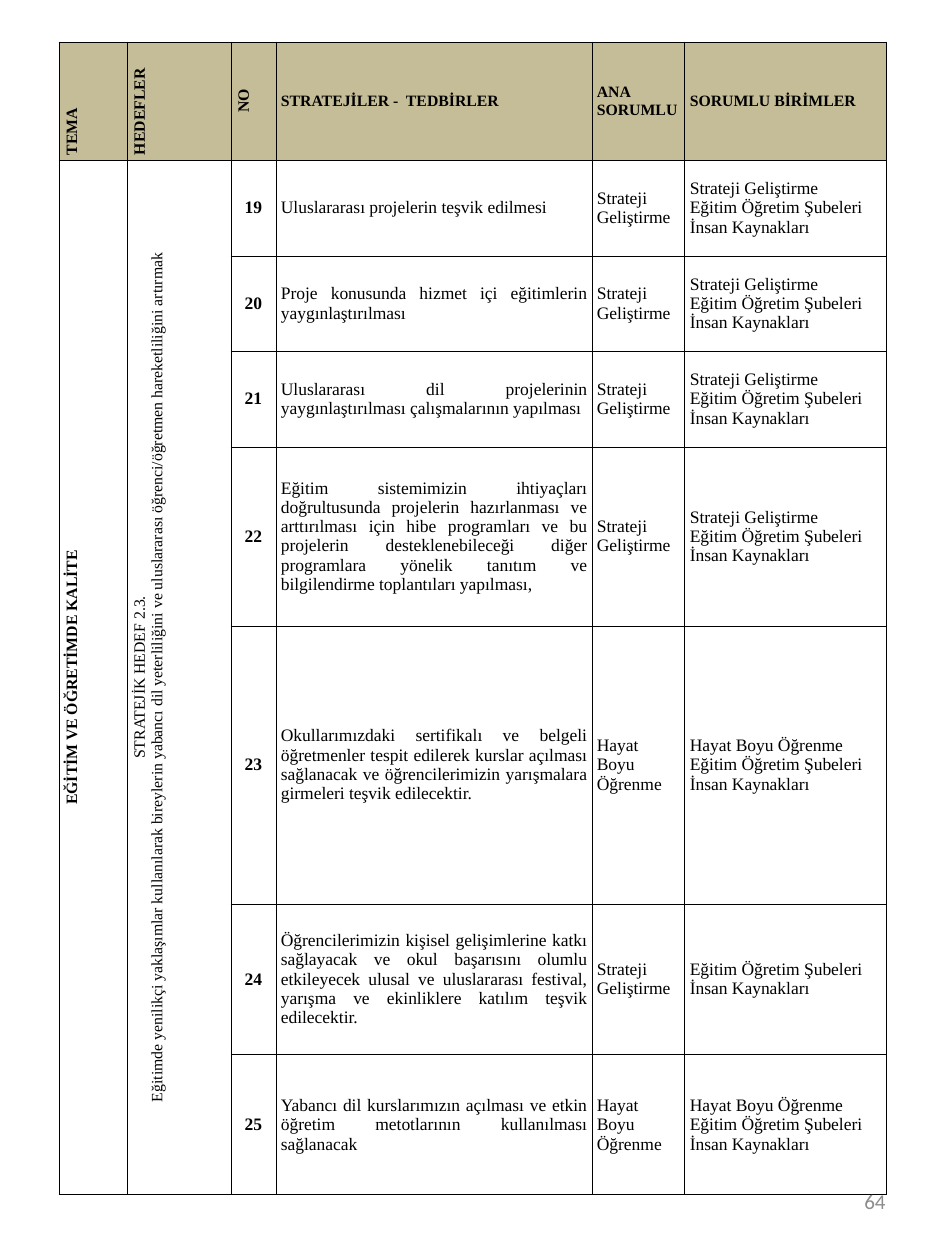
from lxml.etree import SubElement
from pptx import Presentation
from pptx.dml.color import RGBColor
from pptx.enum.text import MSO_ANCHOR, PP_ALIGN
from pptx.oxml.ns import qn
from pptx.util import Pt

PX = 914400 // 126
COLORS = {"text": "000000", "border": "000000", "header": "C4BD97", "number": "8C8C8C"}
SERIF = "Times New Roman"
LEFT, CENTER, JUSTIFY = PP_ALIGN.LEFT, PP_ALIGN.CENTER, PP_ALIGN.JUSTIFY

COLUMNS = [68, 104, 45, 316, 93, 202]
ROWS = [118, 96, 95, 96, 179, 278, 151, 140]

# Header: text, alignment, upright
HEADER = [
    ("TEMA", LEFT, True),
    ("HEDEFLER", LEFT, True),
    ("NO", CENTER, True),
    ("STRATEJİLER -  TEDBİRLER", JUSTIFY, False),
    ("ANA SORUMLU", LEFT, False),
    ("SORUMLU BİRİMLER", LEFT, False),
]
THEME = "EĞİTİM VE ÖĞRETİMDE KALİTE"
GOAL = ("STRATEJİK HEDEF 2.3.\nEğitimde yenilikçi yaklaşımlar kullanılarak bireylerin "
        "yabancı dil yeterliliğini ve uluslararası öğrenci/öğretmen hareketliliğini artırmak")

STRATEGY = "Strateji Geliştirme"
LIFELONG = "Hayat Boyu Öğrenme"
SHARED_UNITS = "Eğitim Öğretim Şubeleri\nİnsan Kaynakları"
FIRST_NO = 19
# Measure, main unit, whether the main unit is also listed among the units
MEASURES = [
    ("Uluslararası projelerin teşvik edilmesi", STRATEGY, True),
    ("Proje konusunda hizmet içi eğitimlerin yaygınlaştırılması", STRATEGY, True),
    ("Uluslararası dil projelerinin yaygınlaştırılması çalışmalarının yapılması",
     STRATEGY, True),
    ("Eğitim sistemimizin ihtiyaçları doğrultusunda projelerin hazırlanması ve "
     "arttırılması için hibe programları ve bu projelerin desteklenebileceği diğer "
     "programlara yönelik tanıtım ve bilgilendirme toplantıları yapılması, ", STRATEGY, True),
    ("Okullarımızdaki sertifikalı ve belgeli öğretmenler tespit edilerek kurslar açılması "
     "sağlanacak ve öğrencilerimizin yarışmalara girmeleri teşvik edilecektir. ",
     LIFELONG, True),
    ("Öğrencilerimizin kişisel gelişimlerine katkı sağlayacak ve okul başarısını olumlu "
     "etkileyecek ulusal ve uluslararası festival, yarışma ve ekinliklere katılım teşvik "
     "edilecektir.", STRATEGY, False),
    ("Yabancı dil kurslarımızın açılması ve etkin öğretim metotlarının kullanılması "
     "sağlanacak ", LIFELONG, True),
]


def px(*lengths):
    return [length * PX for length in lengths]


def write(frame, text, size, align=LEFT, bold=False, font=SERIF, color="text"):
    paragraph = frame.paragraphs[0]
    paragraph.alignment = align
    for index, line in enumerate(text.split("\n")):
        if index:
            paragraph.add_line_break()
        run = paragraph.add_run()
        run.text = line
        run.font.size = Pt(size)
        run.font.bold = bold
        run.font.name = font
        run.font.color.rgb = RGBColor.from_string(COLORS[color])


def draw_borders(cell):
    properties = cell._tc.get_or_add_tcPr()
    for side in ("a:lnL", "a:lnR", "a:lnT", "a:lnB"):
        line = SubElement(properties, qn(side), w=str(Pt(0.5)))
        fill = SubElement(line, qn("a:solidFill"))
        SubElement(fill, qn("a:srgbClr"), val=COLORS["border"])


def format_cell(cell, fill=None):
    draw_borders(cell)
    cell.vertical_anchor = MSO_ANCHOR.MIDDLE
    cell.margin_left, cell.margin_right = px(5, 5)
    cell.margin_top, cell.margin_bottom = px(4, 4)
    if fill:
        cell.fill.solid()
        cell.fill.fore_color.rgb = RGBColor.from_string(COLORS[fill])
    else:
        cell.fill.background()


def turn_upright(cell):
    cell._tc.get_or_add_tcPr().set("vert", "vert270")


def add_plan_table(slide):
    frame = slide.shapes.add_table(len(ROWS), len(COLUMNS),
                                   *px(59, 42, sum(COLUMNS), sum(ROWS)))
    plan = frame.table
    plan.horz_banding = False
    for column, width in zip(plan.columns, px(*COLUMNS)):
        column.width = width
    for row, height in zip(plan.rows, px(*ROWS)):
        row.height = height
    for index, row in enumerate(plan.rows):
        for cell in row.cells:
            format_cell(cell, None if index else "header")
    return plan


def fill_header(plan):
    for column, (text, align, upright) in enumerate(HEADER):
        cell = plan.cell(0, column)
        write(cell.text_frame, text, 9, align, bold=True)
        if upright:
            turn_upright(cell)


def fill_merged_columns(plan):
    for column, (text, bold) in enumerate([(THEME, True), (GOAL, False)]):
        cell = plan.cell(1, column)
        cell.merge(plan.cell(len(ROWS) - 1, column))
        write(cell.text_frame, text, 9, CENTER, bold)
        turn_upright(cell)


def fill_measures(plan):
    for row, (measure, main_unit, listed) in enumerate(MEASURES, start=1):
        units = f"{main_unit}\n{SHARED_UNITS}" if listed else SHARED_UNITS
        contents = [
            (str(FIRST_NO + row - 1), CENTER, True),
            (measure, JUSTIFY, False),
            (main_unit, LEFT, False),
            (units, LEFT, False),
        ]
        for column, (text, align, bold) in enumerate(contents, start=2):
            write(plan.cell(row, column).text_frame, text, 10, align, bold)


def add_page_number(slide):
    frame = slide.shapes.add_textbox(*px(678, 1168, 220, 67)).text_frame
    frame.word_wrap = True
    frame.vertical_anchor = MSO_ANCHOR.MIDDLE
    write(frame, "64", 12, PP_ALIGN.RIGHT, font="Calibri", color="number")


def main():
    deck = Presentation()
    deck.slide_width, deck.slide_height = px(945, 1260)
    slide = deck.slides.add_slide(deck.slide_layouts[6])

    # Strategy plan
    plan = add_plan_table(slide)
    fill_header(plan)
    fill_merged_columns(plan)
    fill_measures(plan)

    # Page number
    add_page_number(slide)
    deck.save("out.pptx")


if __name__ == "__main__":
    main()
